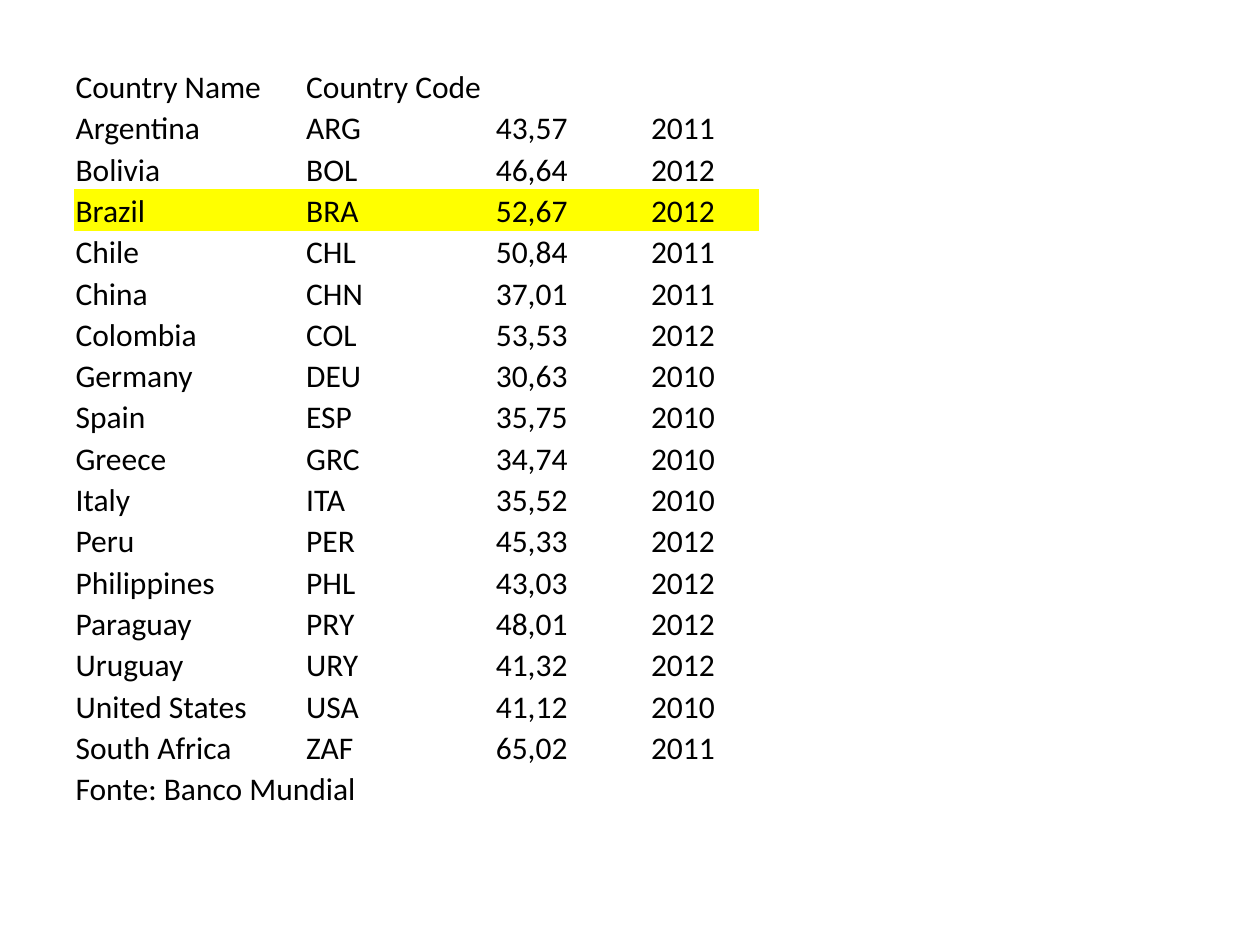
from typing import NamedTuple

from pptx import Presentation
from pptx.dml.color import RGBColor
from pptx.enum.text import MSO_ANCHOR, PP_ALIGN
from pptx.oxml.ns import qn
from pptx.util import Inches, Pt

BOTTOM = MSO_ANCHOR.BOTTOM
LEFT, CENTER = PP_ALIGN.LEFT, PP_ALIGN.CENTER

COLORS = {"text": "000000", "highlight": "FFFF00"}
FONT = "Calibri"
NO_GRID_STYLE = "{2D5ABB26-0587-4C30-8999-92F81FD0307C}"
COLUMN_WIDTHS = (1.83, 1.2, 1.2, 1.2)
ALIGNMENTS = (LEFT, LEFT, CENTER, CENTER)
HIGHLIGHTED = "BRA"


class Row(NamedTuple):
    country: str = ""
    code: str = ""
    value: str = ""
    year: str = ""


ROWS = [
    Row("Country Name", "Country Code"),
    Row("Argentina", "ARG", "43,57", "2011"),
    Row("Bolivia", "BOL", "46,64", "2012"),
    Row("Brazil", "BRA", "52,67", "2012"),
    Row("Chile", "CHL", "50,84", "2011"),
    Row("China", "CHN", "37,01", "2011"),
    Row("Colombia", "COL", "53,53", "2012"),
    Row("Germany", "DEU", "30,63", "2010"),
    Row("Spain", "ESP", "35,75", "2010"),
    Row("Greece", "GRC", "34,74", "2010"),
    Row("Italy", "ITA", "35,52", "2010"),
    Row("Peru", "PER", "45,33", "2012"),
    Row("Philippines", "PHL", "43,03", "2012"),
    Row("Paraguay", "PRY", "48,01", "2012"),
    Row("Uruguay", "URY", "41,32", "2012"),
    Row("United States", "USA", "41,12", "2010"),
    Row("South Africa", "ZAF", "65,02", "2011"),
    Row("Fonte: Banco Mundial"),
]


def fill_cell(cell, text: str, alignment: PP_ALIGN, highlighted: bool) -> None:
    cell.margin_left = cell.margin_right = cell.margin_top = Inches(0.01)
    cell.margin_bottom = 0
    cell.vertical_anchor = BOTTOM
    if highlighted:
        cell.fill.solid()
        cell.fill.fore_color.rgb = RGBColor.from_string(COLORS["highlight"])
    else:
        cell.fill.background()
    p = cell.text_frame.paragraphs[0]
    p.alignment = alignment
    p.font.name = FONT
    p.font.size = Pt(18)
    p.font.color.rgb = RGBColor.from_string(COLORS["text"])
    if text:
        p.add_run().text = text


def add_country_table(slide, rows: list[Row]) -> None:
    s = slide.shapes.add_table(
        len(rows), len(COLUMN_WIDTHS),
        Inches(0.59), Inches(0.52), Inches(sum(COLUMN_WIDTHS)), Inches(5.91),
    )
    table = s.table
    table.first_row = table.horz_banding = False
    for style in s._element.iter(qn("a:tableStyleId")):
        style.text = NO_GRID_STYLE
    for column, width in zip(table.columns, COLUMN_WIDTHS):
        column.width = Inches(width)
    for i, row in enumerate(rows):
        for j, (text, alignment) in enumerate(zip(row, ALIGNMENTS)):
            fill_cell(table.cell(i, j), text, alignment, row.code == HIGHLIGHTED)
    last = len(rows) - 1
    table.cell(0, 1).merge(table.cell(0, 2))
    table.cell(last, 0).merge(table.cell(last, 1))


def main() -> None:
    prs = Presentation()
    prs.slide_width, prs.slide_height = Inches(10), Inches(7.5)
    slide = prs.slides.add_slide(prs.slide_layouts[6])
    add_country_table(slide, ROWS)
    prs.save("out.pptx")


if __name__ == "__main__":
    main()
